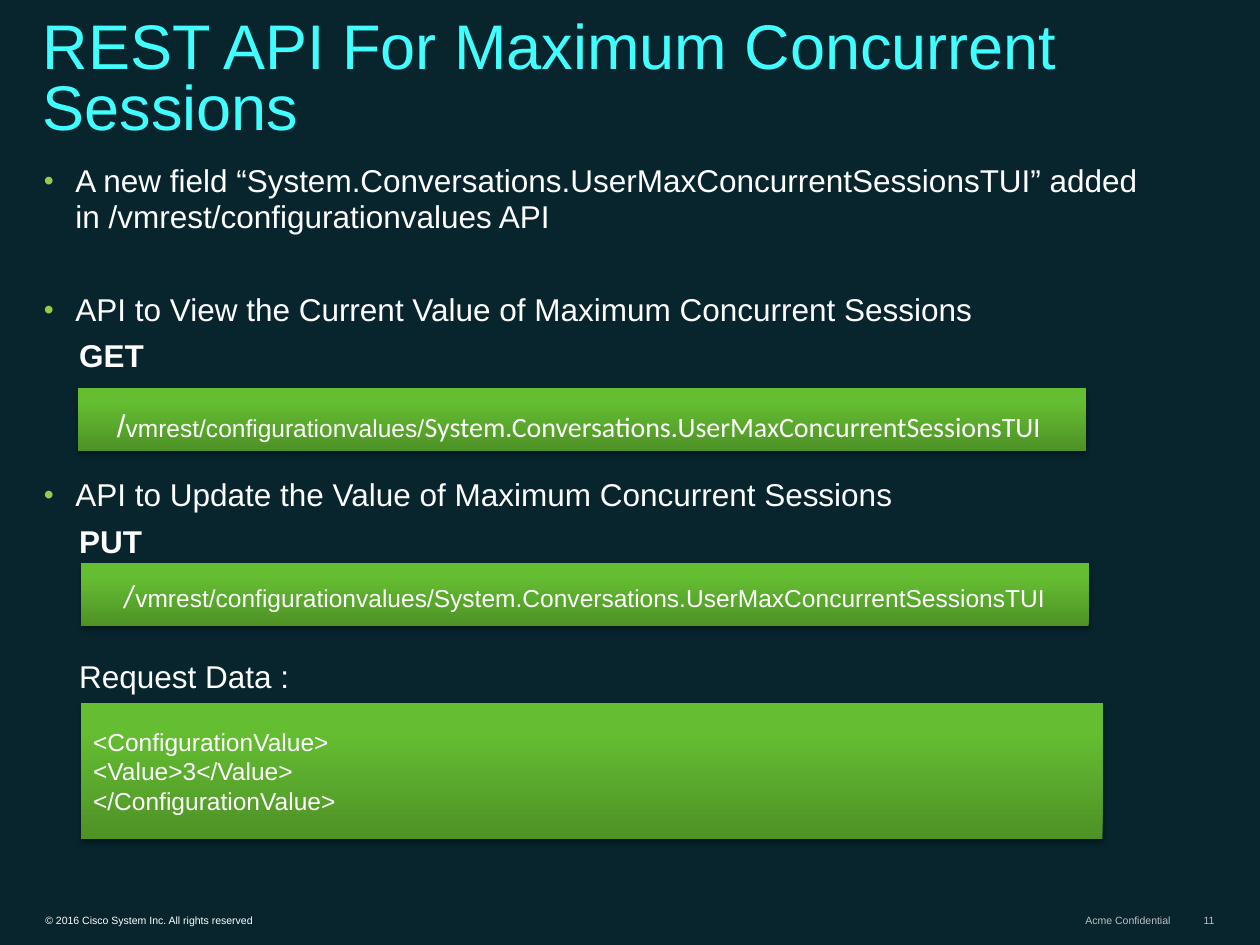
"""Build the slide on the REST API for maximum concurrent sessions."""
from typing import NamedTuple

import pptx
import pptx.dml.color
import pptx.enum.shapes
import pptx.enum.text
import pptx.oxml
import pptx.oxml.ns
import pptx.util

Inches, Pt = pptx.util.Inches, pptx.util.Pt
ALIGN, ANCHOR = pptx.enum.text.PP_ALIGN, pptx.enum.text.MSO_ANCHOR
NS = pptx.oxml.ns.nsdecls("a")
WHITE, GREY, CYAN, LIME = "FFFFFF", "C0C0C0", "40FFFE", "96CA4B"
STOPS = ((0, "4E9226"), (80, "65BE32"), (100, "65C12F"))


class Run(NamedTuple):
    text: str
    size: float
    font: str = "Arial"
    tint: str = WHITE
    bold: bool = False


class Label(NamedTuple):
    area: tuple
    run: Run
    inset: float = 0.04
    align: ALIGN = ALIGN.LEFT
    wrap: bool = True
    pitch: float = 1.0


class Item(NamedTuple):
    text: str
    gap: float = 0
    bullet: bool = False
    bold: bool = False


class Panel(NamedTuple):
    area: tuple
    lines: tuple
    align: ALIGN = ALIGN.CENTER
    top: float = 0.05


LABELS = (
    Label((0.27, 7.2, 3.74, 0.19),
          Run("© 2016 Cisco System Inc. All rights reserved", 6)),
    Label((8.49, 7.2, 0.89, 0.19), Run("Acme Confidential", 6, tint=GREY),
          align=ALIGN.RIGHT, wrap=False),
    Label((9.45, 7.2, 0.28, 0.19), Run("11", 6, tint=GREY),
          align=ALIGN.RIGHT, wrap=False),
    Label((0.25, 0.08, 9.39, 1.1),
          Run("REST API For Maximum Concurrent Sessions", 36, tint=CYAN),
          inset=0.05, pitch=0.8),
)
ITEMS = (
    Item("A new field “System.Conversations.UserMaxConcurrentSessionsTUI” added "
         "in /vmrest/configurationvalues API", bullet=True),
    Item("API to View the Current Value of Maximum Concurrent Sessions", 26.5, True),
    Item("GET", bold=True),
    Item("API to Update the Value of Maximum Concurrent Sessions", 53, True),
    Item("PUT", bold=True),
    Item("Request Data :", 51),
)
PANELS = (
    Panel((0.62, 3.08, 8, 0.5), ((
        Run("/", 18), Run("vmrest/configurationvalues/", 14),
        Run("System.Conversations.UserMaxConcurrentSessionsTUI ", 16, "Calibri")),),
        top=0.13),
    Panel((0.64, 4.47, 8, 0.5), ((
        Run("/", 18, "Calibri"),
        Run("vmrest/configurationvalues/"
            "System.Conversations.UserMaxConcurrentSessionsTUI", 14)),)),
    Panel((0.64, 5.58, 8.11, 1.08), tuple(
        (Run(text, 14),) for text in
        ("<ConfigurationValue>", "<Value>3</Value>", "</ConfigurationValue>")),
        ALIGN.LEFT),
)


def paint(code: str) -> pptx.dml.color.RGBColor:
    """Turn a hex string into a colour."""
    return pptx.dml.color.RGBColor.from_string(code)


def write(para, run: Run) -> None:
    """Add one styled run to a paragraph."""
    part = para.add_run()
    part.text = run.text
    font = part.font
    font.size, font.name, font.bold = Pt(run.size), run.font, run.bold
    font.color.rgb = paint(run.tint)


def next_para(frame, index: int):
    """Return the first paragraph of a frame, or a new one after it."""
    return frame.add_paragraph() if index else frame.paragraphs[0]


def draw_label(slide, label: Label) -> None:
    """Draw a single text line anchored to the bottom of its box."""
    frame = slide.shapes.add_textbox(*map(Inches, label.area)).text_frame
    frame.word_wrap = label.wrap
    frame.vertical_anchor = ANCHOR.BOTTOM
    frame.margin_left = frame.margin_right = Inches(0.09)
    frame.margin_top = frame.margin_bottom = Inches(label.inset)
    para = frame.paragraphs[0]
    para.alignment, para.line_spacing = label.align, label.pitch
    write(para, label.run)


def draw_list(slide, area: tuple, items: tuple) -> None:
    """Draw the bulleted steps with their method names."""
    frame = slide.shapes.add_textbox(*map(Inches, area)).text_frame
    frame.word_wrap = True
    for index, item in enumerate(items):
        para = next_para(frame, index)
        para.line_spacing, para.space_after = 0.95, Pt(6)
        if item.gap:
            para.space_before = Pt(item.gap)
        props = para._p.get_or_add_pPr()
        props.set("marL", str(Inches(0.25 if item.bullet else 0.28)))
        if item.bullet:
            props.set("indent", str(Inches(-0.25)))
            for mark in (f'<a:buClr {NS}><a:srgbClr val="{LIME}"/></a:buClr>',
                         f'<a:buSzPct {NS} val="90000"/>',
                         f'<a:buFont {NS} typeface="Arial"/>',
                         f'<a:buChar {NS} char="•"/>'):
                props.append(pptx.oxml.parse_xml(mark))
        write(para, Run(item.text, 18, bold=item.bold))


def draw_panel(slide, panel: Panel) -> None:
    """Draw a green gradient panel holding code."""
    shape = slide.shapes.add_shape(
        pptx.enum.shapes.MSO_SHAPE.FLOWCHART_PROCESS, *map(Inches, panel.area))
    stops = "".join(f'<a:gs pos="{spot * 1000}"><a:srgbClr val="{tint}"/></a:gs>'
                    for spot, tint in STOPS)
    for look in (
            f'<a:gradFill {NS}><a:gsLst>{stops}</a:gsLst>'
            '<a:lin ang="16200000" scaled="0"/></a:gradFill>',
            f'<a:ln {NS}><a:noFill/></a:ln>',
            f'<a:effectLst {NS}><a:outerShdw blurRad="{Pt(3.1)}" dist="{Pt(1.8)}" '
            'dir="5400000" rotWithShape="0"><a:srgbClr val="000000">'
            '<a:alpha val="35000"/></a:srgbClr></a:outerShdw></a:effectLst>'):
        shape._element.spPr.append(pptx.oxml.parse_xml(look))
    frame = shape.text_frame
    frame.word_wrap = True
    frame.vertical_anchor = ANCHOR.MIDDLE
    frame.margin_top = Inches(panel.top)
    for index, line in enumerate(panel.lines):
        para = next_para(frame, index)
        para.alignment = panel.align
        for run in line:
            write(para, run)


def main() -> None:
    """Build and save the slide."""
    deck = pptx.Presentation()
    deck.slide_width, deck.slide_height = Inches(10), Inches(7.5)
    slide = deck.slides.add_slide(deck.slide_layouts[6])
    back = slide.background.fill
    back.solid()
    back.fore_color.rgb = paint("08252E")
    for label in LABELS:
        draw_label(slide, label)
    draw_list(slide, (0.25, 1.25, 9.25, 5.67), ITEMS)
    for panel in PANELS:
        draw_panel(slide, panel)
    deck.save("out.pptx")


if __name__ == "__main__":
    main()
